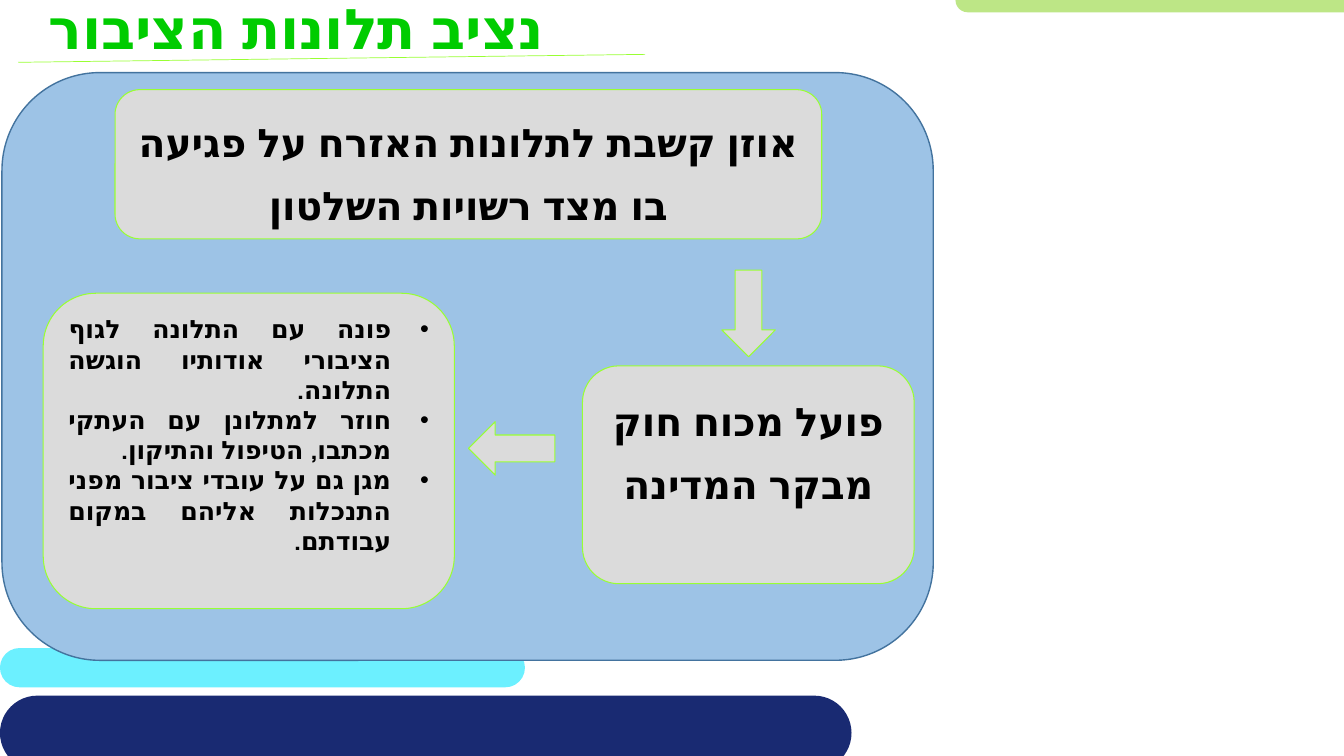
import pptx
import pptx.util
import pptx.dml.color
import pptx.enum.shapes
import pptx.enum.text
import pptx.oxml
import pptx.oxml.ns
import lxml.etree

Cm, Pt = pptx.util.Cm, pptx.util.Pt
RGB = pptx.dml.color.RGBColor.from_string
MSO = pptx.enum.shapes.MSO_SHAPE
ALIGN = pptx.enum.text.PP_ALIGN
qn = pptx.oxml.ns.qn

FONT = "TeX Gyre Adventor"
COLORS = {
    "cyan": "6CF0FF", "lime": "BDE686", "navy": "192A72",
    "panel": "9DC3E6", "panel_line": "43739E",
    "box": "DBDBDB", "box_line": "99FF33",
    "title": "00CC00", "text": "000000",
}

prs = pptx.Presentation()
prs.slide_width, prs.slide_height = Cm(33.87), Cm(19.05)
s = prs.slides.add_slide(prs.slide_layouts[5])


def add_shape(kind, box, fill, line=None, width=0.75):
    sp = s.shapes.add_shape(kind, *[Cm(v) for v in box])
    sp.shadow.inherit = False
    sp.fill.solid()
    sp.fill.fore_color.rgb = RGB(COLORS[fill])
    if line:
        sp.line.color.rgb = RGB(COLORS[line])
        sp.line.width = Pt(width)
    else:
        sp.line.fill.background()
    return sp


def write(sp, lines, size, color, align, spacing=None, bullets=False):
    tf = sp.text_frame
    tf.word_wrap = True
    tf.auto_size = pptx.enum.text.MSO_AUTO_SIZE.NONE
    tf.vertical_anchor = pptx.enum.text.MSO_ANCHOR.TOP
    tf.text = "\n".join(lines)
    for p in tf.paragraphs:
        p.alignment = align
        if spacing:
            p.line_spacing = Pt(spacing)
        pPr = p._p.get_or_add_pPr()
        pPr.set("rtl", "1")
        if bullets:
            pPr.set("marL", str(Cm(0.95)))
            pPr.set("indent", str(Cm(-0.95)))
            lxml.etree.SubElement(pPr, qn("a:buFont")).set("typeface", "Arial")
            lxml.etree.SubElement(pPr, qn("a:buChar")).set("char", "•")
        for r in p.runs:
            r.font.size = Pt(size)
            r.font.bold = True
            r.font.name = FONT
            r.font.color.rgb = RGB(COLORS[color])
            rPr = r._r.get_or_add_rPr()
            rPr.set("lang", "he-IL")
            lxml.etree.SubElement(rPr, qn("a:cs")).set("typeface", FONT)


for box, fill in [
    ((0, 16.33, 13.23, 0.99), "cyan"),
    ((24.08, -0.3, 14.73, 0.61), "lime"),
    ((0, 17.53, 21.46, 1.88), "navy"),
]:
    sp = add_shape(MSO.ROUNDED_RECTANGLE, box, fill)
    sp.adjustments[0] = 0.5

add_shape(MSO.ROUNDED_RECTANGLE, (0.05, 1.83, 23.47, 14.81), "panel", "panel_line", 1)

rule = s.shapes.add_connector(
    pptx.enum.shapes.MSO_CONNECTOR.STRAIGHT, Cm(0.46), Cm(1.57), Cm(16.26), Cm(1.37))
rule.line.color.rgb = RGB(COLORS["box_line"])
rule.line.width = Pt(0.5)
lxml.etree.SubElement(rule._element.spPr, qn("a:effectLst"))

title = s.shapes.title
title.left, title.top, title.width, title.height = Cm(0.97), Cm(-0.28), Cm(23.88), Cm(3.99)
write(title, ["נציב תלונות הציבור"], 40, "title", ALIGN.LEFT)

for box, text in [
    ((2.9, 2.26, 17.81, 3.76), "אוזן קשבת לתלונות האזרח על פגיעה בו מצד רשויות השלטון"),
    ((14.68, 9.22, 8.36, 5.49), "פועל מכוח חוק מבקר המדינה"),
]:
    sp = add_shape(MSO.ROUNDED_RECTANGLE, box, "box", "box_line")
    write(sp, [text], 28, "text", ALIGN.CENTER, spacing=45)

for left, top, angle in [(18.19, 6.81, 0), (12.22, 10.21, 90)]:
    sp = add_shape(MSO.DOWN_ARROW, (left, top, 1.35, 2.18), "box", "box_line")
    sp.rotation = angle

duties = add_shape(MSO.ROUNDED_RECTANGLE, (1.09, 7.39, 10.36, 7.95), "box", "box_line")
write(duties, [
    "פונה עם התלונה לגוף הציבורי אודותיו הוגשה התלונה.",
    "חוזר למתלונן עם העתקי מכתבו, הטיפול והתיקון.",
    "מגן גם על עובדי ציבור מפני התנכלות אליהם במקום עבודתם.",
], 18, "text", ALIGN.JUSTIFY, bullets=True)

prs.save("out.pptx")
